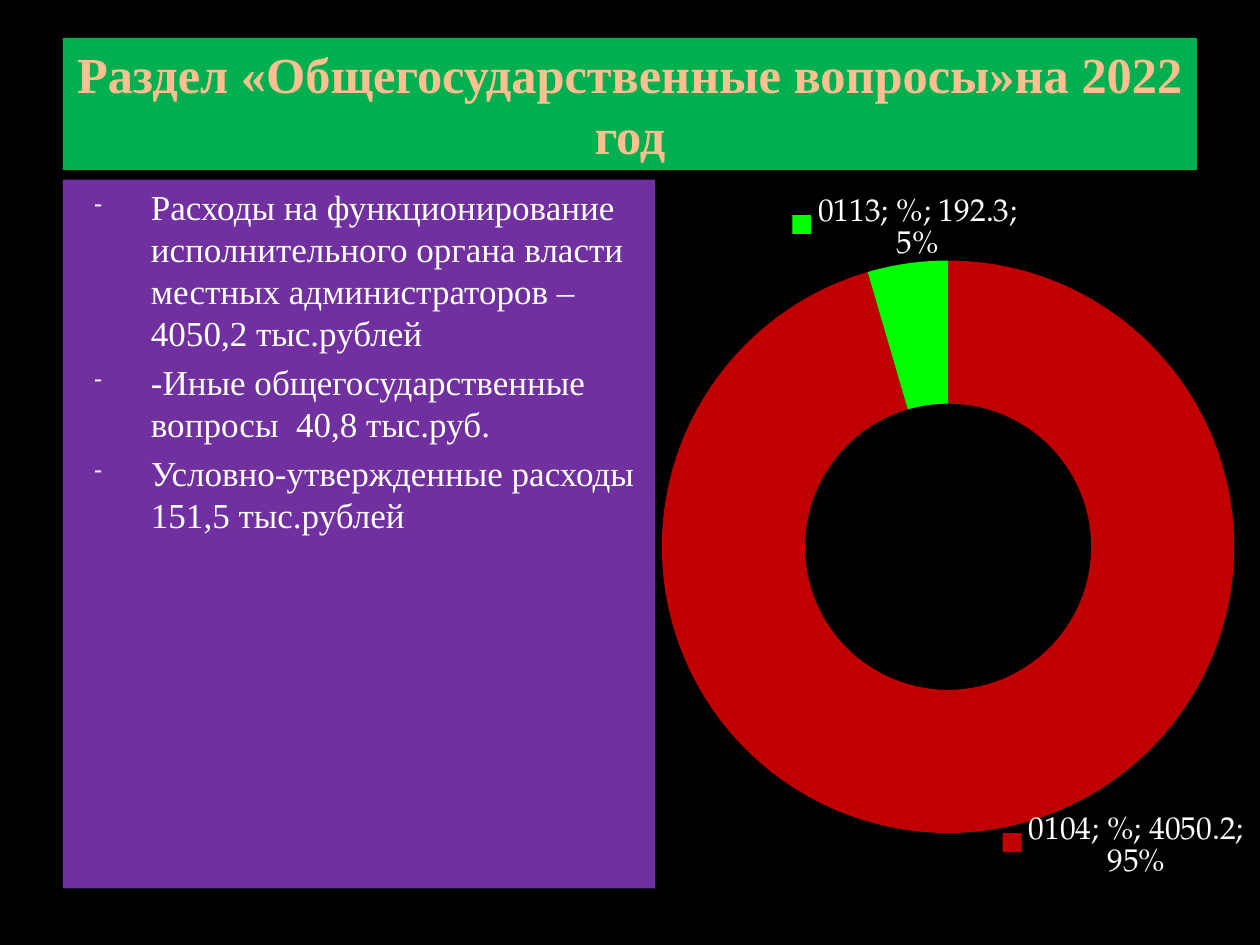
from lxml.etree import SubElement
from pptx import Presentation
from pptx.chart.data import CategoryChartData
from pptx.dml.color import RGBColor
from pptx.enum.chart import XL_CHART_TYPE as ChartType
from pptx.enum.shapes import MSO_SHAPE as Shape
from pptx.enum.text import MSO_ANCHOR as Anchor, PP_ALIGN as Align
from pptx.oxml import parse_xml
from pptx.oxml.ns import nsdecls, qn
from pptx.util import Inches, Pt


def color(value):
    return RGBColor.from_string(value)


class SlideBuilder:
    text_font = "Times New Roman"
    chart_font = "TeX Gyre Pagella"
    white = "FFFFFF"

    def __init__(self, deck):
        self.deck = deck
        self.page = deck.slides.add_slide(deck.slide_layouts[6])

    def background(self, fill):
        self.page.background.fill.solid()
        self.page.background.fill.fore_color.rgb = color(fill)

    def area(self, left, top, width, height):
        across, down = self.deck.slide_width, self.deck.slide_height
        return int(left * across), int(top * down), int(width * across), int(height * down)

    def panel(self, place, fill, lines, size, ink, bold=False, align=Align.LEFT, anchor=Anchor.TOP):
        box = self.page.shapes.add_shape(Shape.RECTANGLE, *self.area(*place))
        box.shadow.inherit = False
        box.fill.solid()
        box.fill.fore_color.rgb = color(fill)
        box.line.fill.background()
        frame = box.text_frame
        frame.word_wrap = True
        frame.vertical_anchor = anchor
        frame.text = "\n".join(lines)
        for para in frame.paragraphs:
            para.alignment = align
            for span in para.runs:
                span.font.name = self.text_font
                span.font.size = Pt(size)
                span.font.bold = bold
                span.font.color.rgb = color(ink)
        return box

    def bullets(self, box, mark, ink):
        for para in box.text_frame.paragraphs:
            props = para._p.get_or_add_pPr()
            props.set("marL", str(Inches(0.6)))
            props.set("indent", str(Inches(-0.45)))
            before = SubElement(props, qn("a:spcBef"))
            SubElement(before, qn("a:spcPct"), val="20000")
            tint = SubElement(props, qn("a:buClr"))
            SubElement(tint, qn("a:srgbClr"), val=ink)
            SubElement(props, qn("a:buSzPct"), val="65000")
            SubElement(props, qn("a:buChar"), char=mark)

    def doughnut(self, place, name, slices, size, plot):
        data = CategoryChartData()
        data.categories = [label for label, *_ in slices]
        data.add_series(name, [value for _, value, *_ in slices])
        chart = self.page.shapes.add_chart(ChartType.DOUGHNUT, *self.area(*place), data).chart
        chart.has_legend = False
        chart.has_title = False
        chart.font.name = self.chart_font
        chart.font.size = Pt(size)
        chart.font.color.rgb = color(self.white)
        ring = chart.plots[0]
        ring.vary_by_categories = True
        ring._element.find(qn("c:holeSize")).set("val", "50")
        series = ring.series[0]
        labels = series.data_labels
        labels.show_category_name = labels.show_series_name = True
        labels.show_value = labels.show_percentage = labels.show_legend_key = True
        for index, (_, _, fill, shift) in enumerate(slices):
            point = series.points[index]
            point.format.fill.solid()
            point.format.fill.fore_color.rgb = color(fill)
            point.format.line.fill.background()
            labels._element.insert(index, self.moved_label(index, *shift))
        area = chart._chartSpace.chart.plotArea
        for old in area.findall(qn("c:layout")):
            area.remove(old)
        area.insert(0, self.inner_layout(*plot))

    def moved_label(self, index, right, down):
        shows = "".join(
            f'<c:show{part} val="{flag}"/>'
            for part, flag in [("LegendKey", 1), ("Val", 1), ("CatName", 1),
                               ("SerName", 1), ("Percent", 1), ("BubbleSize", 0)]
        )
        return parse_xml(
            f'<c:dLbl {nsdecls("c")}><c:idx val="{index}"/><c:layout><c:manualLayout>'
            f'<c:x val="{right}"/><c:y val="{down}"/></c:manualLayout></c:layout>'
            f'{shows}<c:separator>; </c:separator></c:dLbl>'
        )

    def inner_layout(self, left, top, width, height):
        sides = {"x": left, "y": top, "w": width, "h": height}
        values = "".join(f'<c:{side} val="{value}"/>' for side, value in sides.items())
        return parse_xml(
            f'<c:layout {nsdecls("c")}><c:manualLayout><c:layoutTarget val="inner"/>'
            f'<c:xMode val="edge"/><c:yMode val="edge"/>{values}</c:manualLayout></c:layout>'
        )


def main():
    deck = Presentation()
    deck.slide_width, deck.slide_height = Inches(10), Inches(7.5)
    slide = SlideBuilder(deck)
    slide.background("000000")
    slide.panel((0.05, 0.04, 0.9, 0.14), "00B050",
                ["Раздел «Общегосударственные вопросы»на 2022 год"],
                28.8, "FFC091", bold=True, align=Align.CENTER, anchor=Anchor.MIDDLE)
    expenses = slide.panel((0.05, 0.19, 0.47, 0.75), "7030A0", [
        "Расходы на функционирование исполнительного органа власти местных администраторов – 4050,2 тыс.рублей",
        "-Иные общегосударственные вопросы  40,8 тыс.руб.",
        "Условно-утвержденные расходы 151,5 тыс.рублей",
    ], 20, slide.white)
    slide.bullets(expenses, "-", "F9F9F9")
    slide.doughnut((0.5, 0.21, 0.5, 0.73), "%", [
        ("0104", 4050.2, "C00000", (0.23, 0.13)),
        ("0113", 192.3, "00FF00", (-0.02, -0.15)),
    ], 18, (0.01, 0.09, 0.99, 0.83))
    deck.save("out.pptx")


if __name__ == "__main__":
    main()
